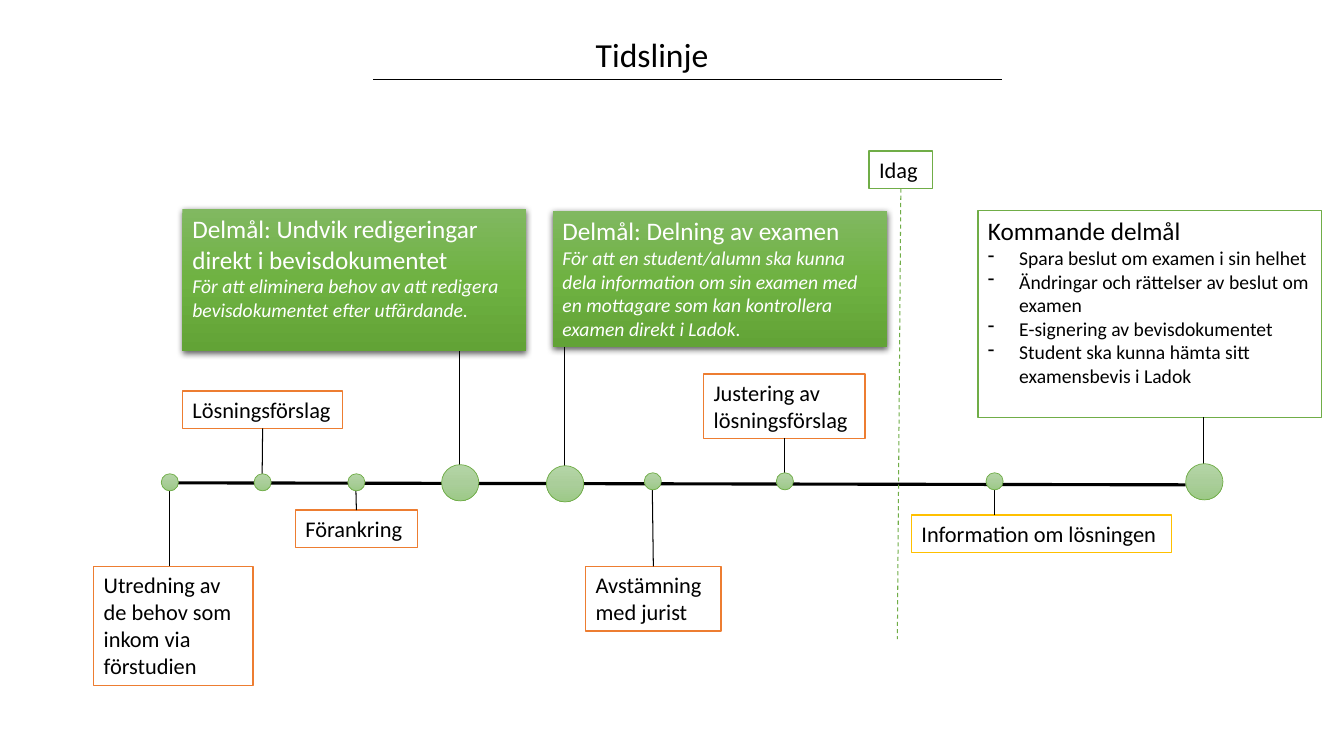
from dataclasses import dataclass

from lxml import etree
from pptx import Presentation
from pptx import util as u
from pptx.dml.color import RGBColor
from pptx.enum import dml, shapes, text
from pptx.oxml.ns import qn

PX = 9144


@dataclass(frozen=True)
class Theme:
    font: str = "Calibri"
    black: str = "000000"
    white: str = "FFFFFF"
    green: str = "70AD47"
    orange: str = "ED7D31"
    yellow: str = "FFC000"
    dot: tuple = ("B5D5A7", "AACE9A", "9CC987")
    goal: tuple = ("81B861", "6FB242", "62A336")
    title: int = 24
    heading: int = 18
    label: int = 16
    detail: int = 14


def px(*values):
    return [u.Emu(v * PX) for v in values]


def rgb(value):
    return RGBColor.from_string(value)


def add(parent, tag, **attrs):
    el = etree.SubElement(parent, qn(tag))
    for name, value in attrs.items():
        el.set(name, str(value))
    return el


class Timeline:
    def __init__(self, theme):
        self.t = theme
        self.prs = Presentation()
        self.prs.slide_width, self.prs.slide_height = px(1333, 750)
        self.s = self.prs.slides.add_slide(self.prs.slide_layouts[6])

    def shape(self, kind, at, fill, line=None, width=1.0):
        sp = self.s.shapes.add_shape(kind, *px(*at))
        sp.shadow.inherit = False
        if isinstance(fill, tuple):
            self.gradient(sp, fill)
        else:
            sp.fill.solid()
            sp.fill.fore_color.rgb = rgb(fill)
        if line:
            sp.line.color.rgb = rgb(line)
            sp.line.width = u.Pt(width)
        else:
            sp.line.fill.background()
        return sp

    def gradient(self, sp, colours):
        sp.fill.gradient()
        sp.fill.gradient_angle = 270
        stops = sp._element.spPr.find(".//" + qn("a:gsLst"))
        for stop in list(stops):
            stops.remove(stop)
        for i, colour in enumerate(colours):
            add(add(stops, "a:gs", pos=i * 50000), "a:srgbClr", val=colour)

    def shadow(self, sp):
        effects = sp._element.spPr.find(qn("a:effectLst"))
        outer = add(effects, "a:outerShdw", blurRad=u.Pt(4.5), dist=u.Pt(1.5),
                    dir=5400000, algn="ctr", rotWithShape=0)
        add(add(outer, "a:srgbClr", val=self.t.black), "a:alpha", val=63000)

    def fill_text(self, sp, paragraphs, colour):
        tf = sp.text_frame
        tf.word_wrap = True
        tf.auto_size = text.MSO_AUTO_SIZE.NONE
        tf.vertical_anchor = text.MSO_ANCHOR.TOP
        for i, (words, size, style) in enumerate(paragraphs):
            p = tf.add_paragraph() if i else tf.paragraphs[0]
            p.alignment = text.PP_ALIGN.LEFT
            if style == "bullet":
                pPr = p._p.get_or_add_pPr()
                pPr.set("marL", str(31 * PX))
                pPr.set("indent", str(-31 * PX))
                add(pPr, "a:buChar", char="-")
            r = p.add_run()
            r.text = words
            r.font.name = self.t.font
            r.font.size = u.Pt(size)
            r.font.italic = style == "italic"
            r.font.color.rgb = rgb(colour)

    def title(self, words, at):
        sp = self.s.shapes.add_textbox(*px(*at))
        self.fill_text(sp, [(words, self.t.title, None)], self.t.black)

    def box(self, at, line, paragraphs):
        sp = self.shape(shapes.MSO_SHAPE.RECTANGLE, at, self.t.white, line)
        self.fill_text(sp, paragraphs, self.t.black)
        return sp

    def label(self, words, at, line):
        return self.box(at, line, [(words, self.t.label, None)])

    def goal(self, heading, detail, at):
        sp = self.shape(shapes.MSO_SHAPE.RECTANGLE, at, self.t.goal)
        self.shadow(sp)
        self.fill_text(sp, [(heading, self.t.heading, None),
                            (detail, self.t.detail, "italic")], self.t.white)

    def dot(self, x, y, big=False):
        w, h = (37, 36) if big else (17, 17)
        self.shape(shapes.MSO_SHAPE.OVAL, (x - w // 2, y - h // 2, w, h),
                   self.t.dot, self.t.green, 0.5)

    def line(self, start, end, width=0.75, colour=None, dash=False,
             box=None, side=0):
        c = self.s.shapes.add_connector(
            shapes.MSO_CONNECTOR.STRAIGHT, *px(*start, *end))
        c.line.color.rgb = rgb(colour or self.t.black)
        c.line.width = u.Pt(width)
        if dash:
            c.line.dash_style = dml.MSO_LINE.DASH
        add(c._element.spPr, "a:effectLst")
        if box is not None:
            c.begin_connect(box, side)


def main():
    t = Theme()
    d = Timeline(t)
    d.title("Tidslinje", (581, 29, 141, 50))
    d.line((370, 79), (994, 79))
    d.line((163, 479), (1176, 481), 2.25)

    today = d.label("Idag", (862, 150, 63, 37), t.green)
    d.line((893, 187), (890, 634), colour=t.green, dash=True, box=today, side=2)

    d.goal("Delmål: Undvik redigeringar direkt i bevisdokumentet",
           "För att eliminera behov av att redigera bevisdokumentet efter utfärdande.",
           (181, 207, 341, 141))
    d.goal("Delmål: Delning av examen",
           "För att en student/alumn ska kunna dela information om sin examen med "
           "en mottagare som kan kontrollera examen direkt i Ladok.",
           (548, 209, 332, 135))
    coming = ["Spara beslut om examen i sin helhet",
              "Ändringar och rättelser av beslut om examen",
              "E-signering av bevisdokumentet",
              "Student ska kunna hämta sitt examensbevis i Ladok"]
    d.box((970, 209, 341, 205), t.green,
          [("Kommande delmål", t.heading, None)]
          + [(words, t.detail, "bullet") for words in coming])

    for x, y, bottom in [(456, 479, 348), (560, 480, 344), (1194, 478, 414)]:
        d.line((x, bottom), (x, y - 18))
        d.dot(x, y, big=True)

    steps = [
        ("Utredning av de behov som inkom via förstudien",
         (93, 562, 158, 118), t.orange, 168, 478),
        ("Lösningsförslag", (181, 388, 159, 37), t.orange, 260, 478),
        ("Förankring", (293, 506, 121, 37), t.orange, 353, 478),
        ("Avstämning med jurist", (581, 562, 134, 64), t.orange, 647, 477),
        ("Justering av lösningsförslag", (698, 371, 160, 64), t.orange, 778, 477),
        ("Information om lösningen", (904, 511, 258, 37), t.yellow, 986, 477),
    ]
    for words, at, colour, x, y in steps:
        left, top, width, height = at
        sp = d.label(words, at, colour)
        above = top < y
        edge = top + height if above else top
        centred = abs(left + width / 2 - x) <= 1
        d.line((x, edge), (x, y - 8 if above else y + 8),
               box=sp if centred else None, side=2 if above else 0)
        d.dot(x, y)

    d.prs.save("out.pptx")


if __name__ == "__main__":
    main()
